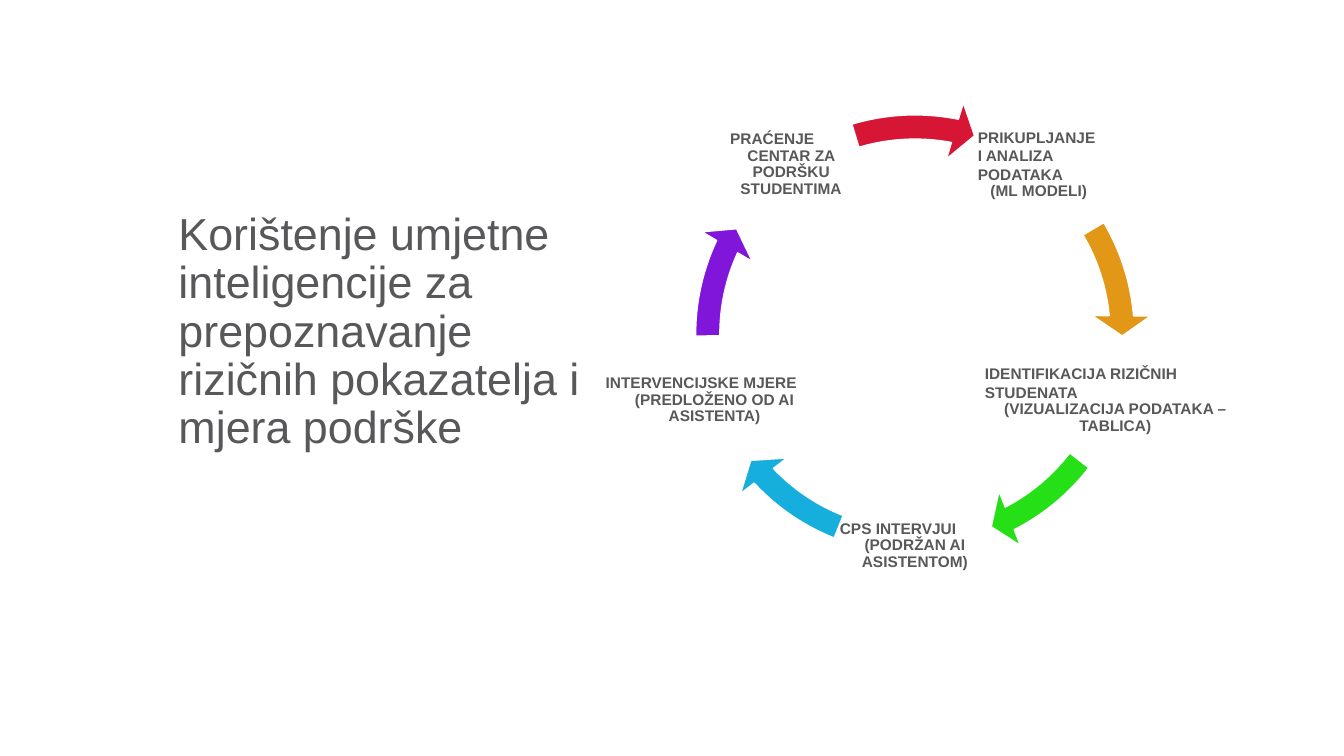
from dataclasses import dataclass
from math import cos, radians, sin

from pptx import Presentation
from pptx.dml.color import RGBColor
from pptx.enum.shapes import MSO_SHAPE
from pptx.enum.text import MSO_ANCHOR, PP_ALIGN
from pptx.util import Inches, Pt


@dataclass(frozen=True)
class Theme:
    font: str = "Arial"
    text: RGBColor = RGBColor(0x58, 0x58, 0x5A)
    arrow_edge: RGBColor = RGBColor(0xFF, 0xFF, 0xFF)
    title_size: int = 32
    label_size: int = 11


@dataclass(frozen=True)
class Stage:
    """One step of the cycle; its arrow sweeps clockwise between two angles in degrees."""
    heading: str
    detail: str
    label_width: float
    arrow_start: float
    arrow_end: float
    color: str


THEME = Theme()
TITLE = ("Korištenje umjetne inteligencije za prepoznavanje "
         "rizičnih pokazatelja i mjera podrške")
STAGES = [
    Stage("PRIKUPLJANJE I ANALIZA PODATAKA", "(ML MODELI)",
          1.25, 329.43, 354.9, "E39717"),
    Stage("IDENTIFIKACIJA RIZIČNIH STUDENATA", "(VIZUALIZACIJA PODATAKA – TABLICA)",
          2.63, 37.54, 62.79, "25E017"),
    Stage("CPS INTERVJUI", "(PODRŽAN AI ASISTENTOM)",
          1.53, 111.61, 136.86, "16AFDD"),
    Stage("INTERVENCIJSKE MJERE", "(PREDLOŽENO OD AI ASISTENTA)",
          2.2, 179.5, 204.98, "7F16DA"),
    Stage("PRAĆENJE", "CENTAR ZA PODRŠKU STUDENTIMA",
          1.25, 253.3, 281.11, "D71635"),
]
LABEL_HEIGHT = 1.25
LABEL_INSET = 0.02
LABEL_RADIUS = 2.09
FIRST_LABEL_ANGLE = -54
ARROW_THICKNESS = 0.24
ARROW_HEAD = 0.29
ARROW_HEAD_ANGLE = 5.6
DEGREE = 0.6  # adjustment units in one degree


def style(paragraph, size, align, spacing, bold=False):
    paragraph.alignment = align
    paragraph.line_spacing = spacing
    font = paragraph.font
    font.name, font.size, font.bold = THEME.font, Pt(size), bold
    font.color.rgb = THEME.text


def place_title(slide, left, top, width, height):
    title = slide.shapes.title
    title.left, title.top = Inches(left), Inches(top)
    title.width, title.height = Inches(width), Inches(height)
    frame = title.text_frame
    frame.text = TITLE
    frame.word_wrap = True
    frame.vertical_anchor = MSO_ANCHOR.MIDDLE
    style(frame.paragraphs[0], THEME.title_size, PP_ALIGN.LEFT, 0.9)


def add_label(shapes, stage, center_x, center_y):
    label = shapes.add_textbox(
        Inches(center_x - stage.label_width / 2), Inches(center_y - LABEL_HEIGHT / 2),
        Inches(stage.label_width), Inches(LABEL_HEIGHT))
    frame = label.text_frame
    frame.word_wrap = True
    frame.vertical_anchor = MSO_ANCHOR.MIDDLE
    frame.margin_left = frame.margin_right = Inches(LABEL_INSET)
    frame.margin_top = frame.margin_bottom = Inches(LABEL_INSET)
    heading, detail = frame.paragraphs[0], frame.add_paragraph()
    heading.text, detail.text = stage.heading, stage.detail
    style(heading, THEME.label_size, PP_ALIGN.LEFT, 1.0, bold=True)
    style(detail, THEME.label_size, PP_ALIGN.CENTER, 0.9, bold=True)


def add_arrow(shapes, stage, left, top, size):
    arrow = shapes.add_shape(MSO_SHAPE.CIRCULAR_ARROW, Inches(left), Inches(top),
                             Inches(size), Inches(size))
    settings = (ARROW_THICKNESS / size, ARROW_HEAD_ANGLE * DEGREE,
                stage.arrow_end * DEGREE, stage.arrow_start * DEGREE, ARROW_HEAD / size)
    for index, value in enumerate(settings):
        arrow.adjustments[index] = value
    arrow.shadow.inherit = False
    arrow.fill.solid()
    arrow.fill.fore_color.rgb = RGBColor.from_string(stage.color)
    arrow.line.color.rgb = THEME.arrow_edge
    arrow.line.width = Pt(1)


def add_cycle(slide, left, top, size):
    """Spread the stages evenly around a ring that fills the square box."""
    shapes = slide.shapes.add_group_shape().shapes
    center_x, center_y = left + size / 2, top + size / 2
    for index, stage in enumerate(STAGES):
        angle = radians(FIRST_LABEL_ANGLE + index * 360 / len(STAGES))
        add_label(shapes, stage, center_x + LABEL_RADIUS * cos(angle),
                  center_y + LABEL_RADIUS * sin(angle))
        add_arrow(shapes, stage, left, top, size)


def main():
    deck = Presentation()
    deck.slide_width, deck.slide_height = Inches(13.33), Inches(7.5)
    slide = deck.slides.add_slide(deck.slide_layouts[5])
    place_title(slide, 1.67, 0.4, 4.31, 5.8)
    add_cycle(slide, 6.73, 0.97, 4.69)
    deck.save("out.pptx")


if __name__ == "__main__":
    main()
